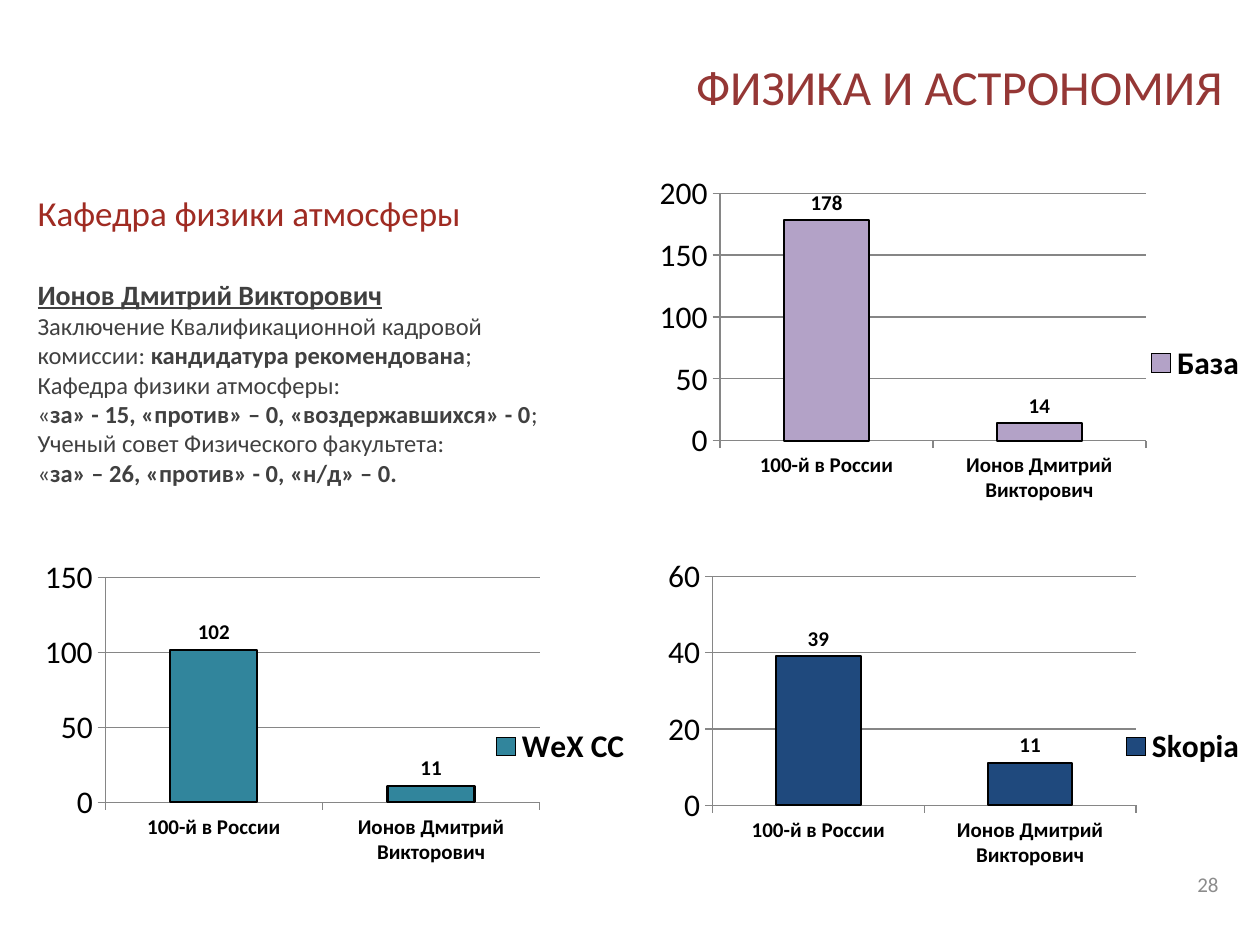
import pptx
import pptx.chart.data
import pptx.dml.color
import pptx.enum.chart
import pptx.enum.text
import pptx.oxml
import pptx.oxml.ns
import pptx.util

Pt = pptx.util.Pt
RGB = pptx.dml.color.RGBColor
ALIGN = pptx.enum.text.PP_ALIGN
ANCHOR = pptx.enum.text.MSO_ANCHOR

BLACK = RGB(0x00, 0x00, 0x00)
WINE = RGB(0x95, 0x37, 0x35)
RED = RGB(0x9F, 0x2B, 0x22)
DARK = RGB(0x40, 0x40, 0x40)
PALE = RGB(0x8C, 0x8C, 0x8C)
GRID = RGB(0x86, 0x86, 0x86)
LILAC = RGB(0xB3, 0xA2, 0xC7)
TEAL = RGB(0x31, 0x85, 0x9C)
NAVY = RGB(0x1F, 0x49, 0x7D)

LEFT, RIGHT = 14.4, 365.76
TOP, LOW = 94.32, 313.2
WIDE, HIGH = 354.24, 226.8
CATS = ["100-й в России", "Ионов Дмитрий Викторович"]


def style(font, size, color=BLACK, bold=False, under=False):
    font.name = "Calibri"
    font.size = Pt(size)
    font.bold = bold
    font.underline = under
    font.color.rgb = color


def write(para, text, **form):
    run = para.add_run()
    run.text = text
    style(run.font, **form)


def place(chart, x, y, w, h):
    """Fix the inner plot area, as shares of the chart frame."""
    plot = chart.element.xpath("c:chart/c:plotArea")[0]
    for old in plot.xpath("c:layout"):
        plot.remove(old)
    parts = "".join(f'<c:{key} val="{val}"/>' for key, val in (
        ("layoutTarget", "inner"), ("xMode", "edge"), ("yMode", "edge"),
        ("x", x), ("y", y), ("w", w), ("h", h)))
    plot.insert(0, pptx.oxml.parse_xml(
        f'<c:layout {pptx.oxml.ns.nsdecls("c")}>'
        f'<c:manualLayout>{parts}</c:manualLayout></c:layout>'))


class Page:
    def __init__(self, deck):
        self.slide = deck.slides.add_slide(deck.slide_layouts[6])

    def text(self, box, lines, align=ALIGN.LEFT, anchor=ANCHOR.MIDDLE, **form):
        """Each line is a list of (text, changes to the format)."""
        frame = self.slide.shapes.add_textbox(*map(Pt, box)).text_frame
        frame.word_wrap = True
        frame.vertical_anchor = anchor
        for i, line in enumerate(lines):
            para = frame.add_paragraph() if i else frame.paragraphs[0]
            para.alignment = align
            for text, change in line:
                write(para, text, **{**form, **change})

    def chart(self, x, y, name, vals, color, top, step, plot):
        data = pptx.chart.data.CategoryChartData()
        data.categories = CATS
        data.add_series(name, vals)
        kind = pptx.enum.chart.XL_CHART_TYPE.COLUMN_CLUSTERED
        chart = self.slide.shapes.add_chart(
            kind, Pt(x), Pt(y), Pt(WIDE), Pt(HIGH), data).chart
        style(chart.font, 18)
        chart.has_title = False
        chart.has_legend = True
        chart.legend.position = pptx.enum.chart.XL_LEGEND_POSITION.RIGHT
        chart.legend.include_in_layout = False
        style(chart.legend.font, 18, bold=True)
        self.axes(chart, top, step)
        self.bars(chart.plots[0], color)
        place(chart, *plot)

    def axes(self, chart, top, step):
        cat, val = chart.category_axis, chart.value_axis
        for axis in (cat, val):
            axis.major_tick_mark = pptx.enum.chart.XL_TICK_MARK.OUTSIDE
            axis.format.line.color.rgb = GRID
            axis.format.line.width = Pt(0.75)
        style(cat.tick_labels.font, 12, bold=True)
        style(val.tick_labels.font, 18)
        val.minimum_scale, val.maximum_scale = 0, top
        val.major_unit = step
        val.has_major_gridlines = True
        val.major_gridlines.format.line.color.rgb = GRID
        val.major_gridlines.format.line.width = Pt(0.75)

    def bars(self, plot, color):
        plot.gap_width = 150
        plot.vary_by_categories = False
        bar = plot.series[0]
        bar.format.fill.solid()
        bar.format.fill.fore_color.rgb = color
        bar.format.line.color.rgb = BLACK
        bar.format.line.width = Pt(1.25)
        tags = bar.data_labels
        tags.show_value = True
        tags.position = pptx.enum.chart.XL_LABEL_POSITION.OUTSIDE_END
        style(tags.font, 12, bold=True)


def main():
    deck = pptx.Presentation()
    deck.slide_width, deck.slide_height = Pt(720), Pt(540)
    page = Page(deck)
    bold = {"bold": True}

    page.text((184.32, 21.6, 521.28, 55.44), [[("ФИЗИКА И АСТРОНОМИЯ", {})]],
              align=ALIGN.RIGHT, size=28, color=WINE)
    page.chart(RIGHT, LOW, "Skopia", (39, 11), NAVY, 60, 20,
               (0.117, 0.071, 0.683, 0.577))
    page.text((535.68, 491.04, 167.76, 28.8), [[("28", {})]],
              align=ALIGN.RIGHT, size=12, color=PALE)
    page.chart(RIGHT, TOP, "База", (178, 14), LILAC, 200, 50,
               (0.129, 0.071, 0.687, 0.624))
    page.text((LEFT, 105.84, 306, 31.68), [[("Кафедра физики атмосферы", {})]],
              size=20, color=RED)
    page.chart(LEFT, LOW, "WeX CC", (102, 11), TEAL, 150, 50,
               (0.129, 0.075, 0.701, 0.566))
    page.text((LEFT, 154.8, 329.04, 128.16), [
        [("Ионов Дмитрий Викторович", {"size": 16, "bold": True, "under": True})],
        [("Заключение Квалификационной кадровой комиссии: ", {}),
         ("кандидатура рекомендована", bold), (";", {})],
        [("Кафедра физики атмосферы:", {})],
        [("«", {}), ("за» - 15, «против» – 0, «воздержавшихся» - 0", bold),
         (";", {})],
        [("Ученый совет Физического факультета:", {})],
        [("«", {}), ("за» – 26, «против» - 0, «н/д» – 0.", bold)],
    ], anchor=ANCHOR.TOP, size=14, color=DARK)
    deck.save("out.pptx")


if __name__ == "__main__":
    main()
